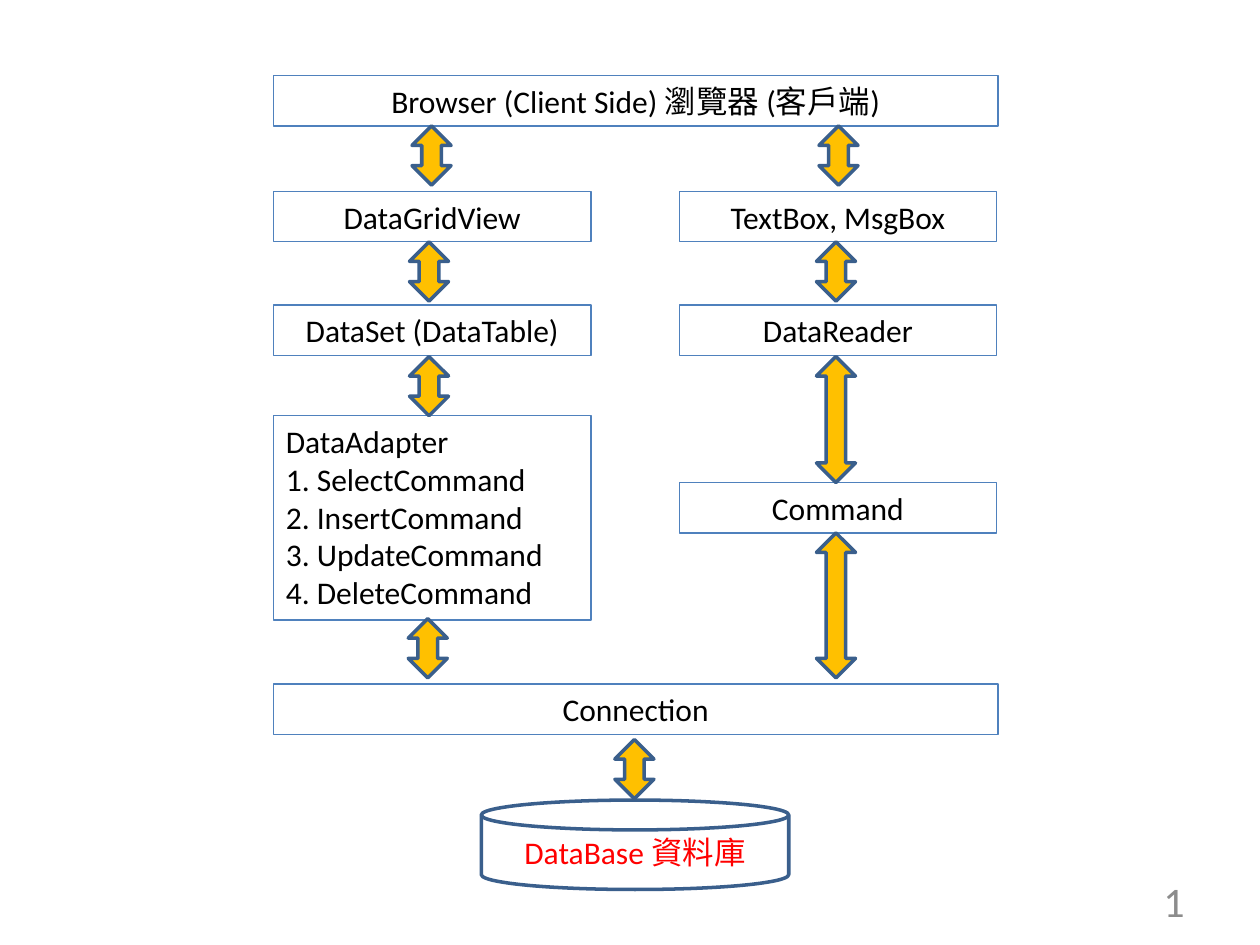
"""Builds a slide of the data access layers between browser and database."""
from dataclasses import dataclass

from pptx import Presentation
from pptx.dml.color import RGBColor
from pptx.enum.shapes import MSO_SHAPE
from pptx.enum.text import MSO_ANCHOR, PP_ALIGN
from pptx.util import Inches, Pt


@dataclass(frozen=True)
class Theme:
    font: str = "Calibri"
    body: float = 18
    number: float = 24
    thin: float = 0.75
    thick: float = 2
    ink: str = "000000"
    muted: str = "8C8C8C"
    accent: str = "FF0000"
    paper: str = "FFFFFF"
    gold: str = "FFC000"
    border: str = "4F81BD"
    outline: str = "3A5F8C"


class LayerDiagram:
    def __init__(self, slide, theme):
        self.slide = slide
        self.theme = theme

    def label(self, frame, lines, color, size, align, anchor):
        layout = {"word_wrap": True, "vertical_anchor": anchor}
        for name, value in layout.items():
            setattr(frame, name, value)
        frame.text = "\n".join(lines)
        style = {"name": self.theme.font, "size": Pt(size)}
        for paragraph in frame.paragraphs:
            paragraph.alignment = align
            for run in paragraph.runs:
                for name, value in style.items():
                    setattr(run.font, name, value)
                run.font.color.rgb = RGBColor.from_string(color)

    def outline(self, kind, place, line, weight, fill=None):
        shape = self.slide.shapes.add_shape(kind, *map(Inches, place))
        shape.shadow.inherit = False
        if fill:
            shape.fill.solid()
            shape.fill.fore_color.rgb = RGBColor.from_string(fill)
        else:
            shape.fill.background()
        shape.line.color.rgb = RGBColor.from_string(line)
        shape.line.width = Pt(weight)
        return shape

    def box(self, left, top, width, height, lines, align=PP_ALIGN.CENTER):
        theme = self.theme
        layer = self.outline(MSO_SHAPE.RECTANGLE, (left, top, width, height),
                             theme.border, theme.thin)
        self.label(layer.text_frame, lines, theme.ink, theme.body, align,
                   MSO_ANCHOR.TOP)

    def arrow(self, left, top, height=0.47):
        self.outline(MSO_SHAPE.UP_DOWN_ARROW, (left, top, 0.31, height),
                     self.theme.outline, self.theme.thick, self.theme.gold)

    def disk(self, place, caption):
        theme = self.theme
        store = self.outline(MSO_SHAPE.FLOWCHART_MAGNETIC_DISK, place,
                             theme.outline, theme.thick, theme.paper)
        self.label(store.text_frame, [caption], theme.accent, theme.body,
                   PP_ALIGN.CENTER, MSO_ANCHOR.MIDDLE)

    def page_number(self, place, number):
        footer = self.slide.shapes.add_textbox(*map(Inches, place))
        self.label(footer.text_frame, [number], self.theme.muted,
                   self.theme.number, PP_ALIGN.RIGHT, MSO_ANCHOR.MIDDLE)


def main():
    deck = Presentation()
    deck.slide_width, deck.slide_height = Inches(10), Inches(7.5)
    slide = deck.slides.add_slide(deck.slide_layouts[6])
    diagram = LayerDiagram(slide, Theme())

    left, right = 2.17, 5.39
    full, half, row = 5.75, 2.52, 0.4
    diagram.page_number((7.17, 6.95, 2.33, row), "1")

    for top, caption in ((0.6, "Browser (Client Side) 瀏覽器 (客戶端)"),
                         (5.43, "Connection")):
        diagram.box(left, top, full, row, [caption])

    for column, top, caption in (
        (left, 1.52, "DataGridView"),
        (left, 2.42, "DataSet (DataTable)"),
        (right, 1.52, "TextBox, MsgBox"),
        (right, 2.42, "DataReader"),
        (right, 3.83, "Command"),
    ):
        diagram.box(column, top, half, row, [caption])

    commands = ("Select", "Insert", "Update", "Delete")
    adapter = ["DataAdapter"] + [f"{index}. {verb}Command"
                                 for index, verb in enumerate(commands, 1)]
    diagram.box(left, 3.3, half, 1.62, adapter, PP_ALIGN.LEFT)

    for link in ((3.27, 1), (3.25, 1.92), (3.25, 2.83), (3.24, 4.91),
                 (6.5, 1), (6.48, 1.92), (6.48, 2.83, 1), (6.48, 4.23, 1.15)):
        diagram.arrow(*link)

    diagram.disk((3.82, 6.35, 2.44, 0.71), "DataBase 資料庫")
    diagram.arrow(4.88, 5.87)
    deck.save("out.pptx")


if __name__ == "__main__":
    main()
